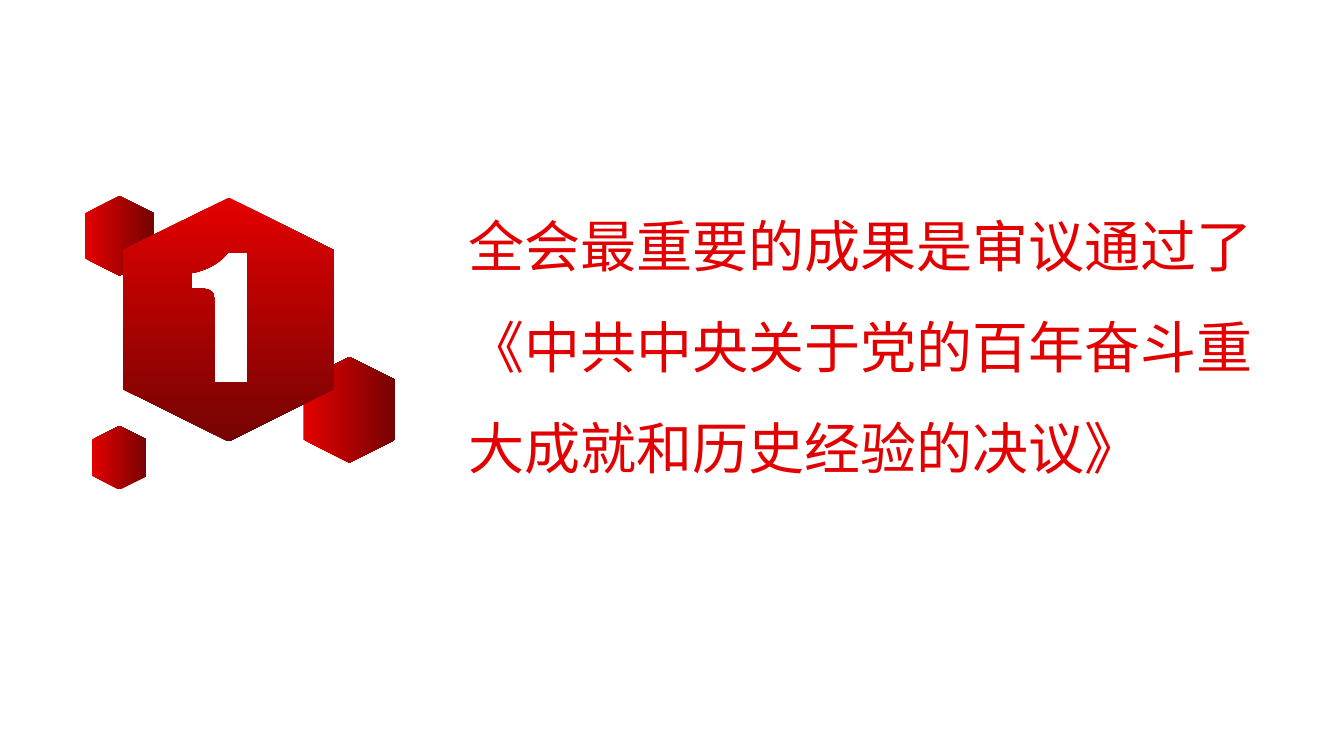
from lxml import etree
from pptx import Presentation
from pptx.dml.color import RGBColor
from pptx.enum.shapes import MSO_SHAPE
from pptx.enum.text import MSO_ANCHOR, MSO_AUTO_SIZE, PP_ALIGN
from pptx.oxml.ns import qn
from pptx.util import Inches, Pt

HEXAGON = MSO_SHAPE.HEXAGON
TOP = MSO_ANCHOR.TOP
GROW = MSO_AUTO_SIZE.SHAPE_TO_FIT_TEXT
LEFT = PP_ALIGN.LEFT
RED = RGBColor(0xE3, 0x00, 0x00)
DARK_RED = RGBColor(0x76, 0x03, 0x03)
FONT = "Noto Sans CJK SC"
CURVE_STEPS = 8
UNITS_PER_INCH = 1000  # freeform points are rounded to whole units


def fill_red_gradient(fill):
    fill.gradient()
    fill.gradient_angle = 270
    for stop, color in zip(fill.gradient_stops, (RED, DARK_RED)):
        stop.color.rgb = color


def curve_points(start, control_1, control_2, end):
    """Return points along a cubic Bezier curve, without its start."""
    points = []
    for step in range(1, CURVE_STEPS + 1):
        t = step / CURVE_STEPS
        weights = ((1 - t) ** 3, 3 * t * (1 - t) ** 2, 3 * t * t * (1 - t), t ** 3)
        corners = (start, control_1, control_2, end)
        points.append(tuple(sum(w * c[axis] for w, c in zip(weights, corners))
                            for axis in (0, 1)))
    return points


prs = Presentation()
prs.slide_width = Inches(13.33)
prs.slide_height = Inches(7.5)
slide = prs.slides.add_slide(prs.slide_layouts[5])

# Small hexagons, standing on a corner
for left, top, width, height in ((2.94, 3.61, 1.05, 0.91),
                                 (0.87, 4.27, 0.63, 0.54),
                                 (0.79, 2, 0.79, 0.68)):
    small_hexagon = slide.shapes.add_shape(
        HEXAGON, Inches(left), Inches(top), Inches(width), Inches(height))
    small_hexagon.rotation = 270
    small_hexagon.shadow.inherit = False
    small_hexagon.line.fill.background()
    fill_red_gradient(small_hexagon.fill)

# Large hexagon with the numeral 1 cut out
numeral = [
    (2.26, 2.51),
    *curve_points((2.26, 2.51), (2.18, 2.61), (2.06, 2.68), (1.9, 2.71)),
    (1.9, 2.86), (1.94, 2.86),
    *curve_points((1.94, 2.86), (2.01, 2.86), (2.06, 2.87), (2.08, 2.88)),
    *curve_points((2.08, 2.88), (2.1, 2.89), (2.11, 2.9), (2.12, 2.92)),
    *curve_points((2.12, 2.92), (2.12, 2.94), (2.13, 3), (2.13, 3.1)),
    (2.13, 3.79), (2.45, 3.79), (2.45, 2.51),
]
outline = [(2.27, 1.96), (3.31, 2.48), (3.31, 3.86),
           (2.27, 4.38), (1.22, 3.86), (1.22, 2.48)]
numeral, outline = (
    [(x * UNITS_PER_INCH, y * UNITS_PER_INCH) for x, y in contour]
    for contour in (numeral, outline))
builder = slide.shapes.build_freeform(*numeral[0], scale=Inches(1) / UNITS_PER_INCH)
builder.add_line_segments(numeral[1:], close=True)
builder.move_to(*outline[0])
builder.add_line_segments(outline[1:], close=True)
number_hexagon = builder.convert_to_shape()
number_hexagon.shadow.inherit = False
number_hexagon.line.fill.background()
fill_red_gradient(number_hexagon.fill)

# Section heading
heading = slide.shapes.title
heading.left, heading.top = Inches(4.55), Inches(1.72)
heading.width, heading.height = Inches(8.5), Inches(3.13)
frame = heading.text_frame
frame.word_wrap = True
frame.auto_size = GROW
frame.vertical_anchor = TOP
paragraph = frame.paragraphs[0]
paragraph.alignment = LEFT
paragraph.line_spacing = 1.5
run = paragraph.add_run()
run.text = "全会最重要的成果是审议通过了《中共中央关于党的百年奋斗重大成就和历史经验的决议》"
run.font.size = Pt(40)
run.font.name = FONT
fill_red_gradient(run.font.fill)
east_asian = etree.SubElement(run.font._element, qn("a:ea"))
east_asian.set("typeface", FONT)

prs.save("out.pptx")
